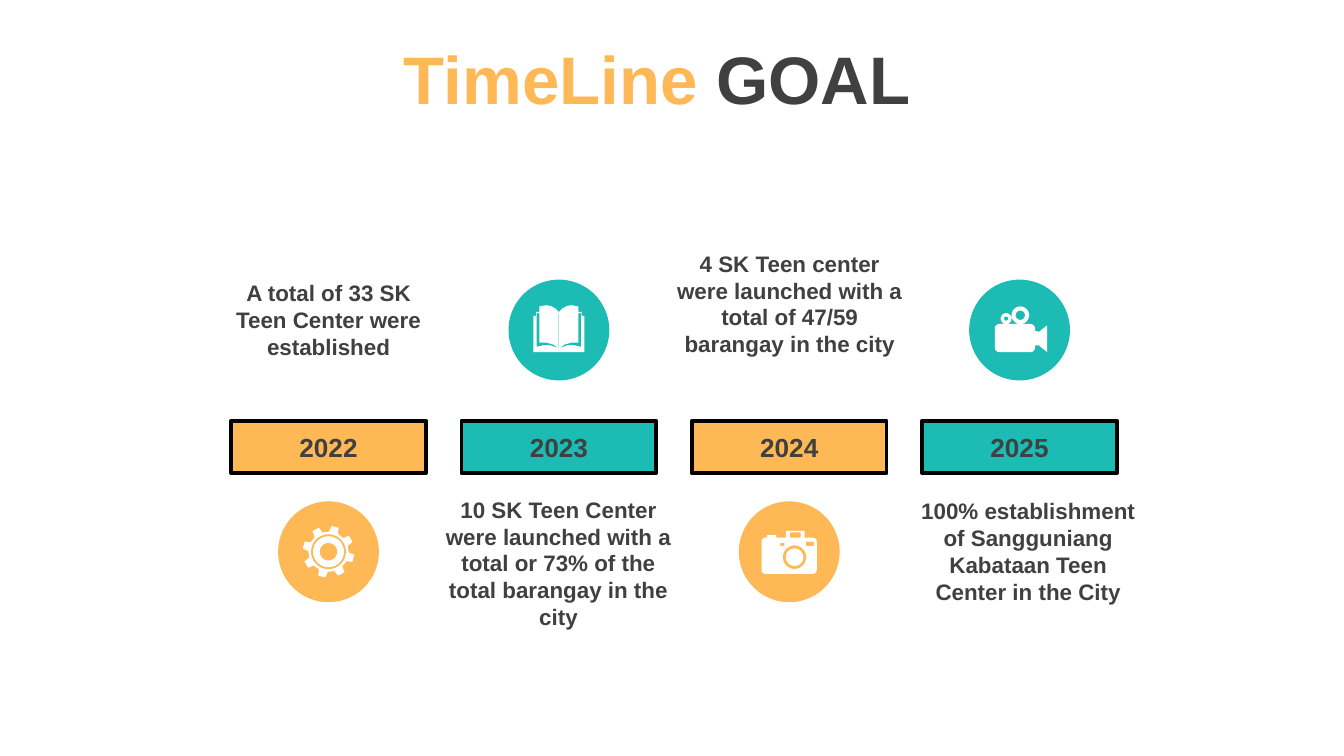
from math import cos, pi, sin

from pptx import Presentation
from pptx.dml.color import RGBColor
from pptx.enum.shapes import MSO_SHAPE
from pptx.enum.text import MSO_ANCHOR, MSO_AUTO_SIZE, PP_ALIGN
from pptx.util import Pt

ORANGE = RGBColor(0xFE, 0xB8, 0x56)
TEAL = RGBColor(0x1C, 0xBB, 0xB4)
DARK = RGBColor(0x40, 0x40, 0x40)
BLACK = RGBColor(0, 0, 0)
WHITE = RGBColor(0xFF, 0xFF, 0xFF)

BAR_LEFT, BAR_TOP, BAR_W, BAR_H, BAR_PITCH = 123.8, 225.4, 104.4, 28.1, 123.4
DISC_SIZE = 54
UPPER_Y, LOWER_Y = 176.8, 295.6


def polar(cx, cy, radius, degrees):
    angle = degrees * pi / 180
    return cx + radius * cos(angle), cy + radius * sin(angle)


def circle(cx, cy, radius):
    return [polar(cx, cy, radius, d) for d in range(0, 360, 10)]


def box(left, top, right, bottom, radius=0):
    """Outline of a rectangle, with rounded corners if a radius is given."""
    if not radius:
        return [(left, top), (right, top), (right, bottom), (left, bottom)]
    corners = [(right - radius, bottom - radius, 0), (left + radius, bottom - radius, 90),
               (left + radius, top + radius, 180), (right - radius, top + radius, 270)]
    return [polar(cx, cy, radius, start + d)
            for cx, cy, start in corners for d in range(0, 91, 15)]


def mirrored(points):
    return [(-x, y) for x, y in reversed(points)]


# Each icon is a list of outlines around (0, 0); an inner outline is a hole.
def gear_icon():
    teeth = [polar(0, 0, radius, -75 + 45 * tooth + offset)
             for tooth in range(8)
             for radius, offset in ((10.8, -13), (13.9, -8), (13.9, 8), (10.8, 13))]
    return [teeth, circle(0, 0, 9.4), circle(0, 0, 8.3), circle(0, 0, 4.7)]


def book_icon():
    half = [(0, -9.7), (2, -11.6), (4.3, -12.9), (6.8, -13.3), (10.4, -12.6),
            (10.4, -9.7), (12.2, -9.7), (12.2, -7.6), (13.7, -7.6), (13.7, 11.9)]
    page_edge = [(10.4, -9), (11.9, -9), (11.9, 9), (8, 8.1), (4.5, 8.2),
                 (0.4, 9.7), (3, 7.8), (6.5, 6.8), (10.4, 6.8)]
    return [half + mirrored(half), page_edge, mirrored(page_edge),
            box(-0.2, -9, 0.2, 9.4)]


def camera_icon():
    return [box(-14.8, -7.6, 14.8, 11.9, 2.2), box(-11.9, -9, -6.8, -7.6),
            box(-1.8, -11.2, 8.3, -7.6), box(0.4, -10.4, 6.1, -7.6),
            box(-4.7, -4.7, -2.5, -3.2), box(9, -5.4, 13.3, -3.2),
            circle(2.9, 2.9, 6.3), circle(2.9, 2.9, 4.7)]


def camcorder_icon():
    lens = [(8.3, 0.4), (10.4, 1), (14.8, -2.5), (14.8, 11.9), (10.4, 8.3), (8.3, 8.3)]
    return [box(-13.3, -3.2, 8.3, 11.9, 2.5), lens,
            circle(0.4, -7.9, 4.7), circle(0.4, -7.9, 2.5),
            circle(-7.2, -6.1, 2.9), circle(-7.2, -6.1, 1.1)]


def style_text(p, size):
    p.alignment = PP_ALIGN.CENTER
    p.font.name = "Arial"
    p.font.size = Pt(size)
    p.font.bold = True
    p.font.color.rgb = DARK


def add_title(slide):
    title = slide.shapes.title
    title.left, title.top, title.width, title.height = Pt(-7.9), Pt(10.8), Pt(720), Pt(61.2)
    tf = title.text_frame
    tf.vertical_anchor = MSO_ANCHOR.MIDDLE
    p = tf.paragraphs[0]
    style_text(p, 36)
    for text, color in (("TimeLine", ORANGE), (" GOAL", DARK)):
        r = p.add_run()
        r.text = text
        r.font.color.rgb = color


def add_year_bar(slide, left, year, color):
    sp = slide.shapes.add_shape(MSO_SHAPE.RECTANGLE, Pt(left), Pt(BAR_TOP), Pt(BAR_W), Pt(BAR_H))
    sp.shadow.inherit = False
    sp.fill.solid()
    sp.fill.fore_color.rgb = color
    sp.line.color.rgb = BLACK
    sp.line.width = Pt(2)
    tf = sp.text_frame
    tf.vertical_anchor = MSO_ANCHOR.MIDDLE
    tf.text = year
    style_text(tf.paragraphs[0], 14)


def add_caption(slide, text, left, top, width, height):
    tb = slide.shapes.add_textbox(Pt(left), Pt(top), Pt(width), Pt(height))
    tf = tb.text_frame
    tf.word_wrap = True
    tf.auto_size = MSO_AUTO_SIZE.SHAPE_TO_FIT_TEXT
    tf.text = text
    style_text(tf.paragraphs[0], 12)


def fill_plain(sp, color):
    sp.shadow.inherit = False
    sp.fill.solid()
    sp.fill.fore_color.rgb = color
    sp.line.fill.background()


def add_icon_disc(slide, cx, cy, color, outlines):
    disc = slide.shapes.add_shape(MSO_SHAPE.OVAL, Pt(cx - DISC_SIZE / 2), Pt(cy - DISC_SIZE / 2),
                                  Pt(DISC_SIZE), Pt(DISC_SIZE))
    fill_plain(disc, color)
    placed = [[(Pt(cx + x), Pt(cy + y)) for x, y in outline] for outline in outlines]
    builder = slide.shapes.build_freeform(*placed[0][0])
    for i, points in enumerate(placed):
        if i:
            builder.move_to(*points[0])
        builder.add_line_segments(points[1:], close=True)
    fill_plain(builder.convert_to_shape(), WHITE)


def main():
    prs = Presentation()
    prs.slide_width, prs.slide_height = Pt(720), Pt(405)
    slide = prs.slides.add_slide(prs.slide_layouts[5])
    add_title(slide)

    milestones = [
        ("2022", ORANGE, LOWER_Y, gear_icon(),
         "A total of 33 SK Teen Center were established", (114.5, 146.2, 123.1, 51.1)),
        ("2023", TEAL, UPPER_Y, book_icon(),
         "10 SK Teen Center were launched with a total or 73% of the total barangay in the city",
         (229.7, 262.1, 139, 79.9)),
        ("2024", ORANGE, LOWER_Y, camera_icon(),
         "4 SK Teen center were launched with a total of 47/59 barangay in the city",
         (355, 130.3, 136.1, 65.5)),
        ("2025", TEAL, UPPER_Y, camcorder_icon(),
         "100% establishment of Sangguniang Kabataan Teen Center in the City",
         (484.6, 262.8, 132.5, 65.5)),
    ]
    for i, (year, color, icon_y, outlines, caption, frame) in enumerate(milestones):
        left = BAR_LEFT + i * BAR_PITCH
        add_year_bar(slide, left, year, color)
        add_icon_disc(slide, left + BAR_W / 2, icon_y, color, outlines)
        add_caption(slide, caption, *frame)

    prs.save("out.pptx")


if __name__ == "__main__":
    main()
